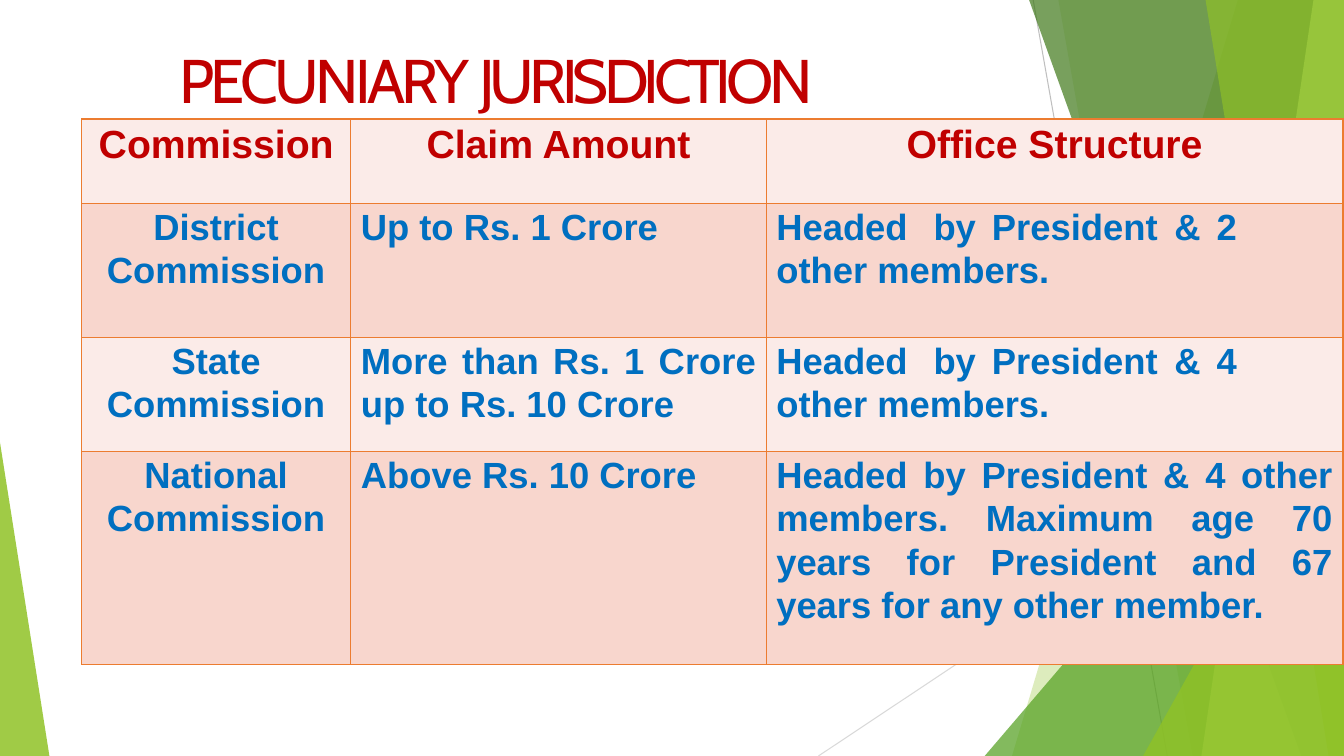
from lxml.etree import SubElement
from pptx import Presentation
from pptx.dml.color import RGBColor
from pptx.enum.shapes import MSO_CONNECTOR as CONN, MSO_SHAPE as SHAPE
from pptx.enum.text import MSO_ANCHOR as ANCHOR, PP_ALIGN as ALIGN
from pptx.oxml.ns import qn
from pptx.util import Pt

W, H = 960, 540
TITLE = [("PECUNIARY ", -2.7), ("JURISDICTION", -3.5)]
HEADER = ["Commission", "Claim Amount", "Office Structure"]
BODY = [
    ["District Commission", "Up to Rs. 1 Crore",
     "Headed\tby\tPresident\t&\t2\tother members."],
    ["State Commission", "More than Rs. 1 Crore up to Rs. 10 Crore",
     "Headed\tby\tPresident\t&\t4\tother members."],
    ["National Commission", "Above Rs. 10 Crore",
     "Headed by President & 4 other members. Maximum age 70 "
     "years for President and 67 years for any other member."],
]
JUSTIFIED = {(2, 1), (3, 2)}
SINGLE_LINE = {(1, 1), (3, 1)}
TABS = [112.3, 154.1, 284.4, 314.6, 339.8]
COLS = [192.2, 296.8, 412]
ROWS = [60.5, 95.5, 81.4, 152]
TABLE_LEFT, TABLE_TOP = 58.3, 85
BANDS = ["FBEBE8", "F8D6CD"]
RED, BLUE, BORDER = "C00000", "006FC0", "EC7C30"

LINES = [("BFBFBF", (738, 0, 833.8, H)), ("D9D9D9", (W, 290.2, 584.6, H))]
FACETS = [
    ("band", "90C226", 30, (884.2, 722.9)),
    ("band", "90C226", 20, (756, 851.8)),
    ("triangle", "54A021", 72, (703.4, 239.8, 256.6, 1)),
    ("band", "3F7819", 70, (735.1, 929.5)),
    ("band", "C0E474", 70, (938.2, 858.2)),
    ("band", "90C226", 65, (861.1, 949)),
    ("triangle", "90C226", 80, (816.5, 283, 143.5, 1)),
    ("triangle", "90C226", 85, (0, 316.1, 35.3, 0)),
]


def rgb(value):
    return RGBColor.from_string(value)


def apply(obj, fmt):
    for name, value in fmt.items():
        setattr(obj, name, value)


def paint(fill, color):
    fill.solid()
    fill.fore_color.rgb = rgb(color)


def add_run(p, text, size, font, color, bold=False, spacing=0):
    r = p.add_run()
    r.text = text
    apply(r.font, {"size": Pt(size), "name": font, "bold": bold})
    r.font.color.rgb = rgb(color)
    if spacing:
        r.font._element.set("spc", str(round(spacing * 100)))


def add_line(s, color, ends):
    line = s.shapes.add_connector(CONN.STRAIGHT, *map(Pt, ends))
    line.line.color.rgb = rgb(color)
    line.line.width = Pt(0.75)
    SubElement(line._element.spPr, qn("a:effectLst"))


def add_facet(s, kind, color, opacity, geometry):
    if kind == "band":
        top_x, bottom_x = geometry
        outline = s.shapes.build_freeform(Pt(top_x), 0)
        outline.add_line_segments(
            [(Pt(W), 0), (Pt(W), Pt(H)), (Pt(bottom_x), Pt(H))], close=True)
        sp = outline.convert_to_shape()
    else:
        left, top, width, apex = geometry
        sp = s.shapes.add_shape(SHAPE.ISOSCELES_TRIANGLE, Pt(left), Pt(top),
                                Pt(width), Pt(H - top))
        sp.adjustments[0] = apex
    sp.shadow.inherit = False
    sp.line.fill.background()
    paint(sp.fill, color)
    clr = sp._element.spPr.find(qn("a:solidFill"))[0]
    SubElement(clr, qn("a:alpha"), val=str(opacity * 1000))


def add_title(s):
    tf = s.shapes.add_textbox(Pt(58.3), Pt(23.8), Pt(676.8), Pt(103.7)).text_frame
    apply(tf, {"word_wrap": True, "vertical_anchor": ANCHOR.TOP,
               "margin_left": 0, "margin_top": Pt(5.8),
               "margin_right": 0, "margin_bottom": 0})
    p = tf.paragraphs[0]
    p.space_before = Pt(1.1)
    p._p.get_or_add_pPr().set("marL", str(Pt(69.8)))
    for text, spacing in TITLE:
        add_run(p, text, 44, "Cabin", RED, spacing=spacing)


def add_borders(cell):
    tcPr = cell._tc.get_or_add_tcPr()
    for side in "LRTB":
        ln = SubElement(tcPr, qn("a:ln" + side), w=str(Pt(1)))
        SubElement(SubElement(ln, qn("a:solidFill")), qn("a:srgbClr"), val=BORDER)


def fill_cell(cell, row, col, text):
    head = row == 0
    single = head or (row, col) in SINGLE_LINE
    add_borders(cell)
    paint(cell.fill, BANDS[row % 2])
    apply(cell, {"margin_left": 0, "margin_right": 0, "margin_bottom": 0,
                 "margin_top": Pt(2.9 if single else 0.7)})
    p = cell.text_frame.paragraphs[0]
    apply(p, {"space_before": Pt(2.7 if single else 0.6),
              "line_spacing": 1.0 if single else 1.07})
    pPr = p._p.get_or_add_pPr()
    if head or col == 0:
        p.alignment = ALIGN.CENTER
    else:
        justified = (row, col) in JUSTIFIED
        p.alignment = ALIGN.JUSTIFY if justified else ALIGN.LEFT
        pPr.set("marL", str(Pt(7.2)))
        if justified:
            pPr.set("marR", str(Pt(7)))
    if "\t" in text:
        tabs = SubElement(pPr, qn("a:tabLst"))
        for pos in TABS:
            SubElement(tabs, qn("a:tab"), pos=str(Pt(pos)), algn="l")
    add_run(p, text, 28 if head else 26, "Arial", RED if head else BLUE, bold=True)


def add_jurisdiction_table(s):
    table = s.shapes.add_table(len(ROWS), len(COLS), Pt(TABLE_LEFT), Pt(TABLE_TOP),
                               Pt(sum(COLS)), Pt(sum(ROWS))).table
    apply(table, {"first_row": False, "horz_banding": False})
    for column, width in zip(table.columns, COLS):
        column.width = Pt(width)
    for row, height in zip(table.rows, ROWS):
        row.height = Pt(height)
    for i, texts in enumerate([HEADER, *BODY]):
        for j, text in enumerate(texts):
            fill_cell(table.cell(i, j), i, j, text)


def main():
    prs = Presentation()
    apply(prs, {"slide_width": Pt(W), "slide_height": Pt(H)})
    s = prs.slides.add_slide(prs.slide_layouts[6])
    for line in LINES:
        add_line(s, *line)
    for facet in FACETS:
        add_facet(s, *facet)
    add_title(s)
    add_jurisdiction_table(s)
    prs.save("out.pptx")


if __name__ == "__main__":
    main()
